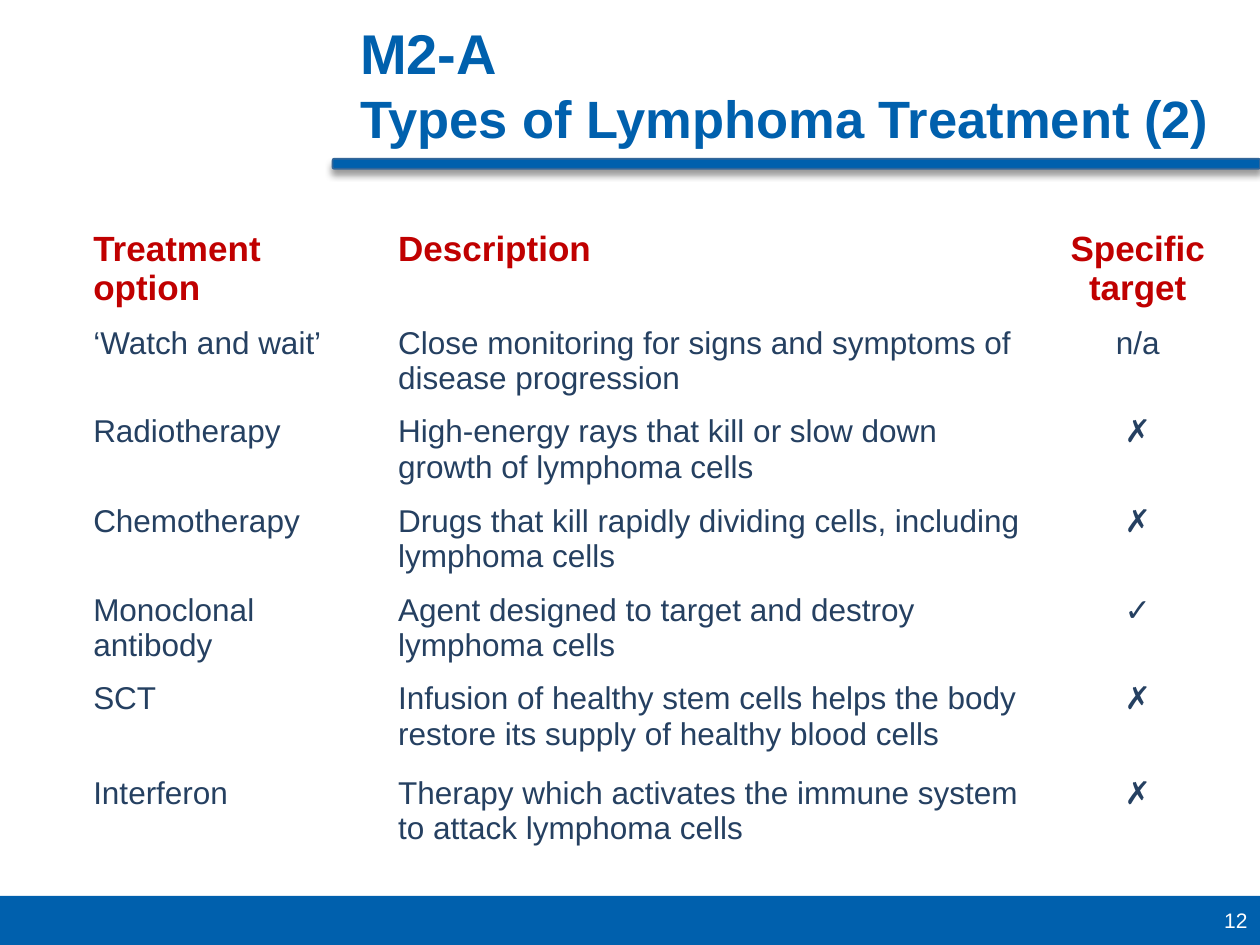
from pptx import Presentation
from pptx.dml.color import RGBColor
from pptx.enum.shapes import MSO_SHAPE
from pptx.enum.text import MSO_ANCHOR, PP_ALIGN
from pptx.oxml import parse_xml
from pptx.oxml.ns import nsdecls
from pptx.util import Inches, Pt

RECT, ROUND = MSO_SHAPE.RECTANGLE, MSO_SHAPE.ROUNDED_RECTANGLE
MIDDLE = MSO_ANCHOR.MIDDLE
LEFT, CENTER, RIGHT = PP_ALIGN.LEFT, PP_ALIGN.CENTER, PP_ALIGN.RIGHT

BLUE = RGBColor(0x00, 0x60, 0xAD)
EDGE = RGBColor(0x33, 0x66, 0x99)
RED = RGBColor(0xC0, 0x00, 0x00)
NAVY = RGBColor(0x25, 0x40, 0x61)
WHITE = RGBColor(0xFF, 0xFF, 0xFF)

UNIT = Inches(0.1)
COLS, ROWS = 100, 75

HEADS = ("Treatment option", "Description", "Specific target")
OPTIONS = (
    ("‘Watch and wait’", "Close monitoring for signs and symptoms of disease progression", "n/a"),
    ("Radiotherapy", "High-energy rays that kill or slow down growth of lymphoma cells", "✗"),
    ("Chemotherapy", "Drugs that kill rapidly dividing cells, including lymphoma cells", "✗"),
    ("Monoclonal antibody", "Agent designed to target and destroy lymphoma cells", "✓"),
    ("SCT", "Infusion of healthy stem cells helps the body restore its supply of healthy blood cells", "✗"),
    ("Interferon", "Therapy which activates the immune system to attack lymphoma cells", "✗"),
)
WIDTHS = (24.2, 52.3, 14.8)
HEIGHTS = (7.5, 7, 7.1, 7.1, 7, 7.5, 6.6)


def grid(*spans):
    return [round(span * UNIT) for span in spans]


def add_run(para, text, size, color, bold=False):
    run = para.add_run()
    run.text = text
    font = run.font
    font.name, font.size, font.bold = "Arial", Pt(size), bold
    font.color.rgb = color


def add_box(slide, box, align):
    frame = slide.shapes.add_textbox(*grid(*box)).text_frame
    frame.word_wrap = True
    frame.vertical_anchor = MIDDLE
    para = frame.paragraphs[0]
    para.alignment = align
    return para


def add_bar(slide, box, kind):
    bar = slide.shapes.add_shape(kind, *grid(*box))
    bar.shadow.inherit = False
    bar.fill.solid()
    bar.fill.fore_color.rgb = BLUE
    bar.line.fill.background()
    return bar


def add_shade(bar):
    effects = bar._element.spPr.find(
        "{http://schemas.openxmlformats.org/drawingml/2006/main}effectLst")
    effects.append(parse_xml(
        f'<a:outerShdw {nsdecls("a")} blurRad="{Pt(4)}" dist="{Pt(3)}" '
        'dir="5400000" rotWithShape="0"><a:srgbClr val="000000">'
        '<a:alpha val="40000"/></a:srgbClr></a:outerShdw>'))


def add_header(slide, box):
    left, top, width, height = box
    rule = add_bar(slide, (left, top + height - 0.8, width, 0.8), ROUND)
    rule.line.color.rgb = EDGE
    rule.line.width = Pt(1)
    add_shade(rule)
    para = add_box(slide, (left + 1.2, top, width - 1.2, height - 1.8), LEFT)
    add_run(para, "M2-A", 32, BLUE, True)
    para.add_line_break()
    add_run(para, "Types of Lymphoma Treatment (2)", 30, BLUE, True)


def add_footer(slide, box):
    left, top, width, height = box
    add_bar(slide, box, RECT)
    span = 23.3
    para = add_box(slide, (left + width - span, top, span, height), RIGHT)
    add_run(para, "12", 12, WHITE)


def add_border(cell):
    props = cell._tc.get_or_add_tcPr()
    for spot, side in enumerate(("lnL", "lnR", "lnT", "lnB")):
        props.insert(spot, parse_xml(
            f'<a:{side} {nsdecls("a")} w="{Pt(1)}"><a:solidFill>'
            f'<a:srgbClr val="{WHITE}"/></a:solidFill></a:{side}>'))


def add_options(slide, box):
    data = (HEADS,) + OPTIONS
    table = slide.shapes.add_table(len(data), len(HEADS), *grid(*box)).table
    table.first_row = table.horz_banding = False
    for col, width in zip(table.columns, grid(*WIDTHS)):
        col.width = width
    for row, height in zip(table.rows, grid(*HEIGHTS)):
        row.height = height
    for i, texts in enumerate(data):
        style = (18, NAVY, False) if i else (20, RED, True)
        for j, text in enumerate(texts):
            cell = table.cell(i, j)
            cell.fill.background()
            add_border(cell)
            para = cell.text_frame.paragraphs[0]
            para.alignment = CENTER if j == len(HEADS) - 1 else LEFT
            add_run(para, text, *style)


def main():
    deck = Presentation()
    deck.slide_width, deck.slide_height = grid(COLS, ROWS)
    slide = deck.slides.add_slide(deck.slide_layouts[6])
    add_footer(slide, (0, 71.1, COLS, 3.9))
    add_header(slide, (26.4, 1.7, 73.6, 11.7))
    add_options(slide, (6.4, 17.7, sum(WIDTHS), sum(HEIGHTS)))
    deck.save("out.pptx")


if __name__ == "__main__":
    main()
